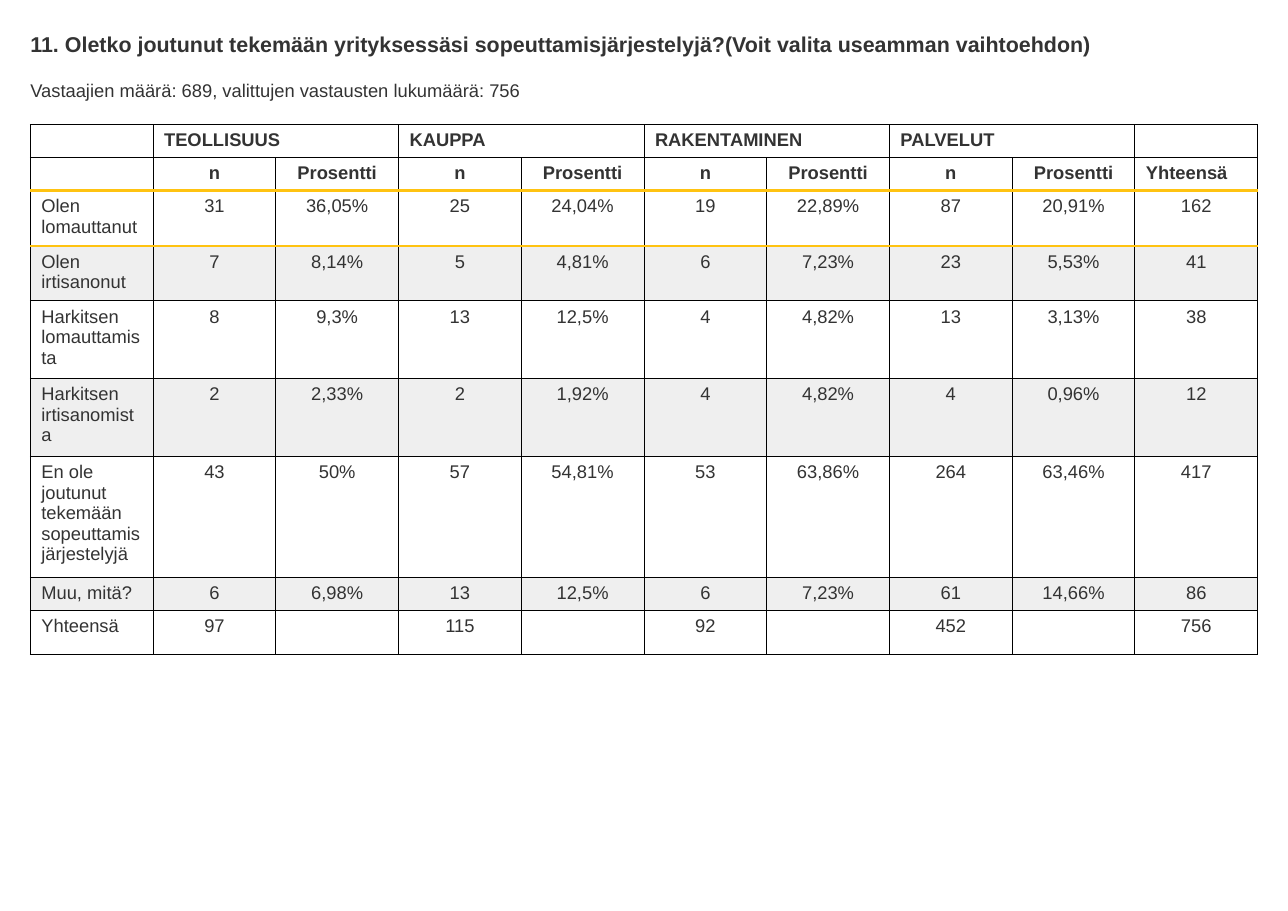
from lxml import etree
from pptx import Presentation
from pptx.dml.color import RGBColor
from pptx.enum.text import MSO_AUTO_SIZE, PP_ALIGN
from pptx.oxml.ns import qn
from pptx.util import Cm, Pt

CENTER, LEFT = PP_ALIGN.CENTER, PP_ALIGN.LEFT
GROW = MSO_AUTO_SIZE.SHAPE_TO_FIT_TEXT
INK, BLACK, GOLD, GREY = "333333", "000000", "FFC311", "EFEFEF"

TITLE = ("11. Oletko joutunut tekemään yrityksessäsi sopeuttamisjärjestelyjä?"
         "(Voit valita useamman vaihtoehdon)")
COUNT = "Vastaajien määrä: 689, valittujen vastausten lukumäärä: 756"
GROUPS = ["TEOLLISUUS", "KAUPPA", "RAKENTAMINEN", "PALVELUT"]
HEADS = [""] + ["n", "Prosentti"] * len(GROUPS) + ["Yhteensä"]
BODY = [
    ["Olen lomauttanut", "31", "36,05%", "25", "24,04%",
     "19", "22,89%", "87", "20,91%", "162"],
    ["Olen irtisanonut", "7", "8,14%", "5", "4,81%",
     "6", "7,23%", "23", "5,53%", "41"],
    ["Harkitsen lomauttamista", "8", "9,3%", "13", "12,5%",
     "4", "4,82%", "13", "3,13%", "38"],
    ["Harkitsen irtisanomista", "2", "2,33%", "2", "1,92%",
     "4", "4,82%", "4", "0,96%", "12"],
    ["En ole joutunut tekemään sopeuttamisjärjestelyjä", "43", "50%", "57", "54,81%",
     "53", "63,86%", "264", "63,46%", "417"],
    ["Muu, mitä?", "6", "6,98%", "13", "12,5%",
     "6", "7,23%", "61", "14,66%", "86"],
    ["Yhteensä", "97", "", "115", "", "92", "", "452", "", "756"],
]
HEIGHTS = [0.76, 0.76, 1.27, 1.27, 1.79, 1.79, 2.79, 0.76, 1.01]


def color(code):
    return RGBColor.from_string(code)


def write(para, text, size, bold=False, align=LEFT):
    para.alignment = align
    if not text:
        etree.SubElement(para._p, qn("a:endParaRPr"), sz=str(size * 100))
        return
    run = para.add_run()
    run.text = text
    font = run.font
    font.name, font.size, font.bold = "Arial", Pt(size), bold
    font.color.rgb = color(INK)


def add_line(slide, box, text, size, bold=False):
    frame = slide.shapes.add_textbox(*map(Cm, box)).text_frame
    frame.word_wrap = True
    frame.auto_size = GROW
    frame.margin_left = frame.margin_right = 0
    frame.margin_top = frame.margin_bottom = 0
    write(frame.paragraphs[0], text, size, bold)


def add_edge(cell, side, code, width):
    props = cell._tc.get_or_add_tcPr()
    edge = etree.SubElement(props, qn("a:ln" + side), w=str(Pt(width)))
    fill = etree.SubElement(edge, qn("a:solidFill"))
    etree.SubElement(fill, qn("a:srgbClr"), val=code)


def style_cell(cell, row):
    for side in "LRTB":
        gold = (side, row) in [("B", 1), ("T", 2), ("B", 2), ("T", 3)]
        add_edge(cell, side, GOLD if gold else BLACK, 2 if gold else 0.75)
    if row in (3, 5, 7):
        cell.fill.solid()
        cell.fill.fore_color.rgb = color(GREY)
    else:
        cell.fill.background()


def add_grid(slide, box):
    tops = [""]
    for group in GROUPS:
        tops += [group, ""]
    data = [tops + [""], HEADS] + BODY
    wide = len(HEADS)
    grid = slide.shapes.add_table(len(data), wide, *map(Cm, box)).table
    grid.first_row = grid.horz_banding = False
    for col in grid.columns:
        col.width = Cm(box[2] / wide)
    for r, texts in enumerate(data):
        grid.rows[r].height = Cm(HEIGHTS[r])
        for c, text in enumerate(texts):
            cell = grid.cell(r, c)
            style_cell(cell, r)
            left = r == 0 or c == 0 or (r == 1 and c == wide - 1)
            write(cell.text_frame.paragraphs[0], text, 12, r < 2,
                  LEFT if left else CENTER)
    for c in range(1, wide - 1, 2):
        grid.cell(0, c).merge(grid.cell(0, c + 1))


def main():
    deck = Presentation()
    deck.slide_width, deck.slide_height = Cm(29.7), Cm(21)
    slide = deck.slides.add_slide(deck.slide_layouts[6])
    add_line(slide, (0.7, 0.71, 28.3, 0.6), TITLE, 14, True)
    add_line(slide, (0.7, 1.83, 28.3, 0.5), COUNT, 12)
    add_grid(slide, (0.7, 2.87, 28.3, sum(HEIGHTS)))
    deck.save("out.pptx")


if __name__ == "__main__":
    main()
